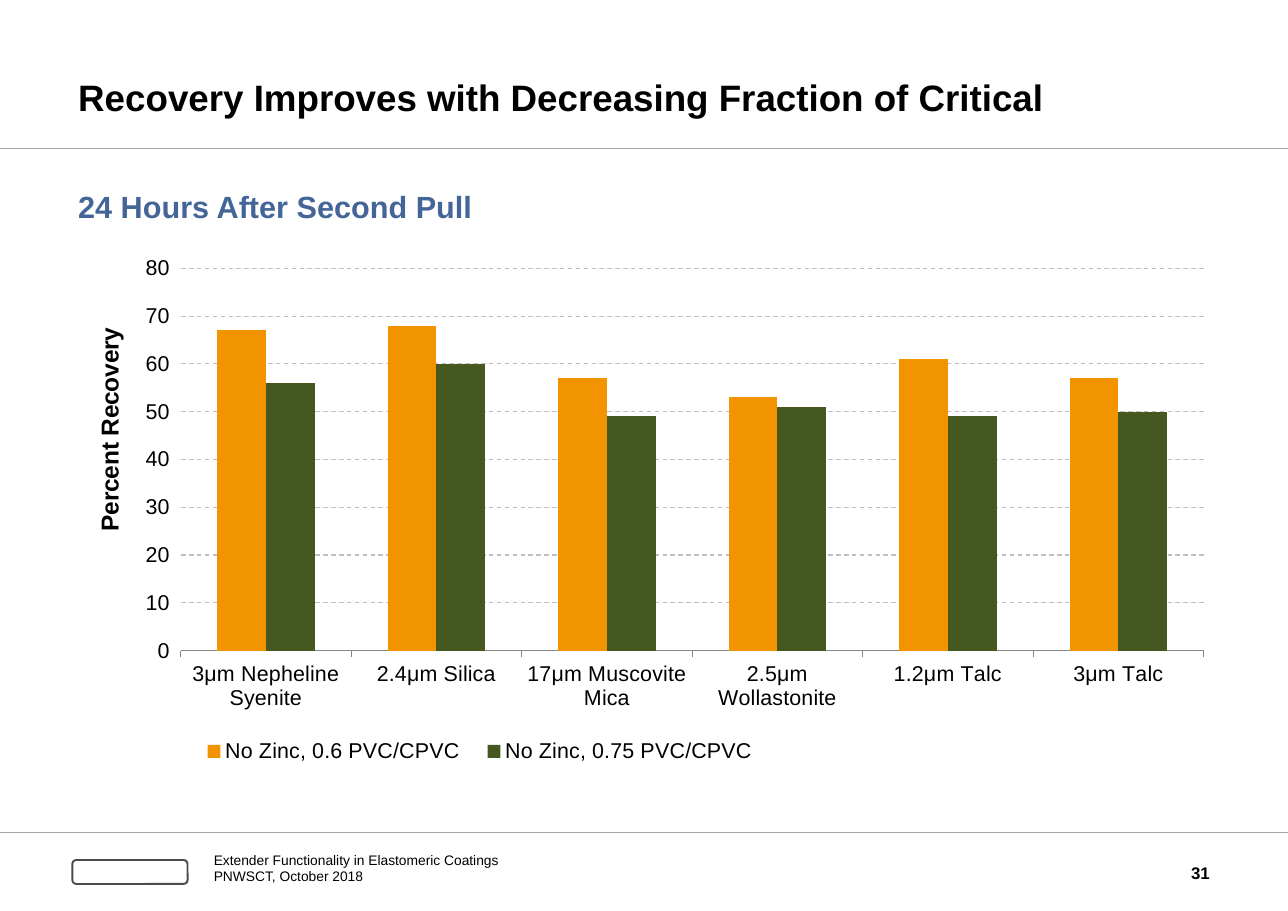
"""Build the slide comparing elastomeric coating recovery by extender."""
import pptx
import pptx.chart.data
import pptx.dml.color
import pptx.enum.chart
import pptx.enum.dml
import pptx.enum.shapes
import pptx.enum.text
import pptx.oxml
import pptx.oxml.ns
import pptx.util

Pt = pptx.util.Pt
RGBColor = pptx.dml.color.RGBColor
Align = pptx.enum.text.PP_ALIGN
Anchor = pptx.enum.text.MSO_ANCHOR
qn = pptx.oxml.ns.qn

TITLE = "Recovery Improves with Decreasing Fraction of Critical"
SUBTITLE = "24 Hours After Second Pull"
FOOTER = ["Extender Functionality in Elastomeric Coatings", "PNWSCT, October 2018"]
PAGE_NUMBER = "31"
AXIS_TITLE = "Percent Recovery"
EXTENDERS = ["3μm Nepheline Syenite", "2.4μm Silica", "17μm Muscovite Mica",
             "2.5μm Wollastonite", "1.2μm Talc", "3μm Talc"]

BLACK = RGBColor(0x00, 0x00, 0x00)
WHITE = RGBColor(0xFF, 0xFF, 0xFF)
BLUE = RGBColor(0x43, 0x65, 0x97)
RULE_GRAY = RGBColor(0xA6, 0xA6, 0xA6)
GRID_GRAY = RGBColor(0xBF, 0xBF, 0xBF)
AXIS_GRAY = RGBColor(0x86, 0x86, 0x86)
BADGE_GRAY = RGBColor(0x4B, 0x4B, 0x4D)
ORANGE = RGBColor(0xF2, 0x94, 0x00)
GREEN = RGBColor(0x44, 0x58, 0x20)

SERIES = [
    ("No Zinc, 0.6 PVC/CPVC", [67, 68, 57, 53, 61, 57], ORANGE),
    ("No Zinc, 0.75 PVC/CPVC", [56, 60, 49, 51, 49, 50], GREEN),
]

PAGE_WIDTH, PAGE_HEIGHT = 841.68, 595.44
MARGIN = 51.12
RULES = [(97.2, 0.75), (544.32, 0.5)]
TITLE_BOX = (MARGIN, 15.12, 739.44, 62.64)
SUBTITLE_BOX = (MARGIN, 123.12, 365.76, 38.88)
CHART_BOX = (MARGIN, 162, 735.84, 352.08)
FOOTER_BOX = (139.68, 556.56, 353.52, 22.32)
NUMBER_BOX = (726.48, 553.68, 64.08, 33.84)
BADGE_BOX = (47.3, 562.1, 75.3, 15.7)


def points(values):
    """Convert a sequence of numbers to point lengths."""
    return [Pt(value) for value in values]


def set_font(font, size, color=BLACK, bold=False):
    """Apply the slide's typeface with a size, colour and weight."""
    font.name, font.size, font.bold = "Arial", Pt(size), bold
    font.color.rgb = color


def write(box, lines, size, color=BLACK, bold=False, anchor=Anchor.MIDDLE,
          align=Align.LEFT, spacing=None):
    """Fill a box with equally formatted paragraphs."""
    frame = box.text_frame
    frame.text = "\n".join(lines)
    frame.word_wrap = True
    frame.auto_size = pptx.enum.text.MSO_AUTO_SIZE.NONE
    frame.vertical_anchor = anchor
    frame.margin_left = frame.margin_right = 0
    frame.margin_top = frame.margin_bottom = 0
    for para in frame.paragraphs:
        para.alignment = align
        para.space_before = Pt(0)
        if spacing:
            para.line_spacing = Pt(spacing)
        set_font(para.font, size, color, bold)


def place(box, area):
    """Move a placeholder to an area given in points."""
    box.left, box.top, box.width, box.height = points(area)


def set_layout(parent, inner=False, **fractions):
    """Fix a chart part at fractions of the chart area."""
    layout = parent.find(qn("c:layout"))
    if layout is None:
        layout = pptx.oxml.parse_xml(
            f'<c:layout {pptx.oxml.ns.nsdecls("c")}/>')
        parent.insert(0, layout)
    manual = layout.makeelement(qn("c:manualLayout"), {})
    layout.append(manual)
    settings = [("layoutTarget", "inner")] if inner else []
    settings += [("xMode", "edge"), ("yMode", "edge"), *fractions.items()]
    for tag, value in settings:
        manual.append(manual.makeelement(qn(f"c:{tag}"), {"val": str(value)}))


def add_rule(page, top, weight):
    """Draw a thin line across the whole page."""
    rule = page.shapes.add_connector(
        pptx.enum.shapes.MSO_CONNECTOR.STRAIGHT,
        *points((0, top, PAGE_WIDTH, top)))
    rule.line.color.rgb = RULE_GRAY
    rule.line.width = Pt(weight)
    properties = rule._element.spPr
    properties.append(properties.makeelement(qn("a:effectLst"), {}))


def add_recovery_chart(page):
    """Add the clustered columns with their axes and legend."""
    data = pptx.chart.data.CategoryChartData()
    data.categories = EXTENDERS
    for name, values, _ in SERIES:
        data.add_series(name, values)
    chart = page.shapes.add_chart(
        pptx.enum.chart.XL_CHART_TYPE.COLUMN_CLUSTERED,
        *points(CHART_BOX), data).chart
    set_font(chart.font, 14)
    chart.has_title = False
    set_layout(chart._chartSpace.chart.plotArea, inner=True,
               x=0.091, y=0.038, w=0.909, h=0.71)

    plot = chart.plots[0]
    plot.gap_width, plot.overlap = 150, 0
    plot.vary_by_categories = False
    for series, (_, _, color) in zip(plot.series, SERIES):
        series.format.fill.solid()
        series.format.fill.fore_color.rgb = color

    ticks = pptx.enum.chart.XL_TICK_MARK
    category_axis = chart.category_axis
    category_axis.major_tick_mark = ticks.OUTSIDE
    category_axis.format.line.color.rgb = AXIS_GRAY

    axis = chart.value_axis
    axis.minimum_scale, axis.maximum_scale, axis.major_unit = 0, 80, 10
    axis.major_tick_mark = ticks.OUTSIDE
    axis.format.line.fill.background()
    axis.tick_labels.number_format = "0"
    axis.tick_labels.number_format_is_linked = False
    grid = axis.major_gridlines.format.line
    grid.color.rgb, grid.width = GRID_GRAY, Pt(0.75)
    grid.dash_style = pptx.enum.dml.MSO_LINE.DASH
    frame = axis.axis_title.text_frame
    frame.text = AXIS_TITLE
    set_font(frame.paragraphs[0].font, 16, bold=True)
    set_layout(axis.axis_title._element, x=0.01, y=0.14)

    chart.has_legend = True
    legend = chart.legend
    legend.position = pptx.enum.chart.XL_LEGEND_POSITION.RIGHT
    legend.include_in_layout = False
    set_font(legend.font, 14)
    set_layout(legend._element, x=0.097, y=0.9, w=0.52, h=0.07)


def main():
    """Assemble and save the deck."""
    deck = pptx.Presentation()
    deck.slide_width, deck.slide_height = Pt(PAGE_WIDTH), Pt(PAGE_HEIGHT)
    page = deck.slides.add_slide(deck.slide_layouts[1])

    title, subtitle = page.placeholders
    place(title, TITLE_BOX)
    write(title, [TITLE], 24, bold=True, anchor=Anchor.BOTTOM)
    place(subtitle, SUBTITLE_BOX)
    subtitle.text_frame.text = SUBTITLE
    write(subtitle, [SUBTITLE], 20, BLUE, True, Anchor.TOP)
    properties = subtitle.text_frame.paragraphs[0]._p.get_or_add_pPr()
    properties.set("marL", "0")
    properties.set("indent", "0")
    no_bullet = properties.makeelement(qn("a:buNone"), {})
    properties.find(qn("a:defRPr")).addprevious(no_bullet)

    for top, weight in RULES:
        add_rule(page, top, weight)
    add_recovery_chart(page)

    badge = page.shapes.add_shape(
        pptx.enum.shapes.MSO_SHAPE.ROUNDED_RECTANGLE, *points(BADGE_BOX))
    badge.shadow.inherit = False
    badge.fill.solid()
    badge.fill.fore_color.rgb = WHITE
    badge.line.color.rgb, badge.line.width = BADGE_GRAY, Pt(1.25)

    footer = page.shapes.add_textbox(*points(FOOTER_BOX))
    write(footer, FOOTER, 9, spacing=10.4)
    number = page.shapes.add_textbox(*points(NUMBER_BOX))
    write(number, [PAGE_NUMBER], 11, bold=True, align=Align.RIGHT)
    deck.save("out.pptx")


if __name__ == "__main__":
    main()
